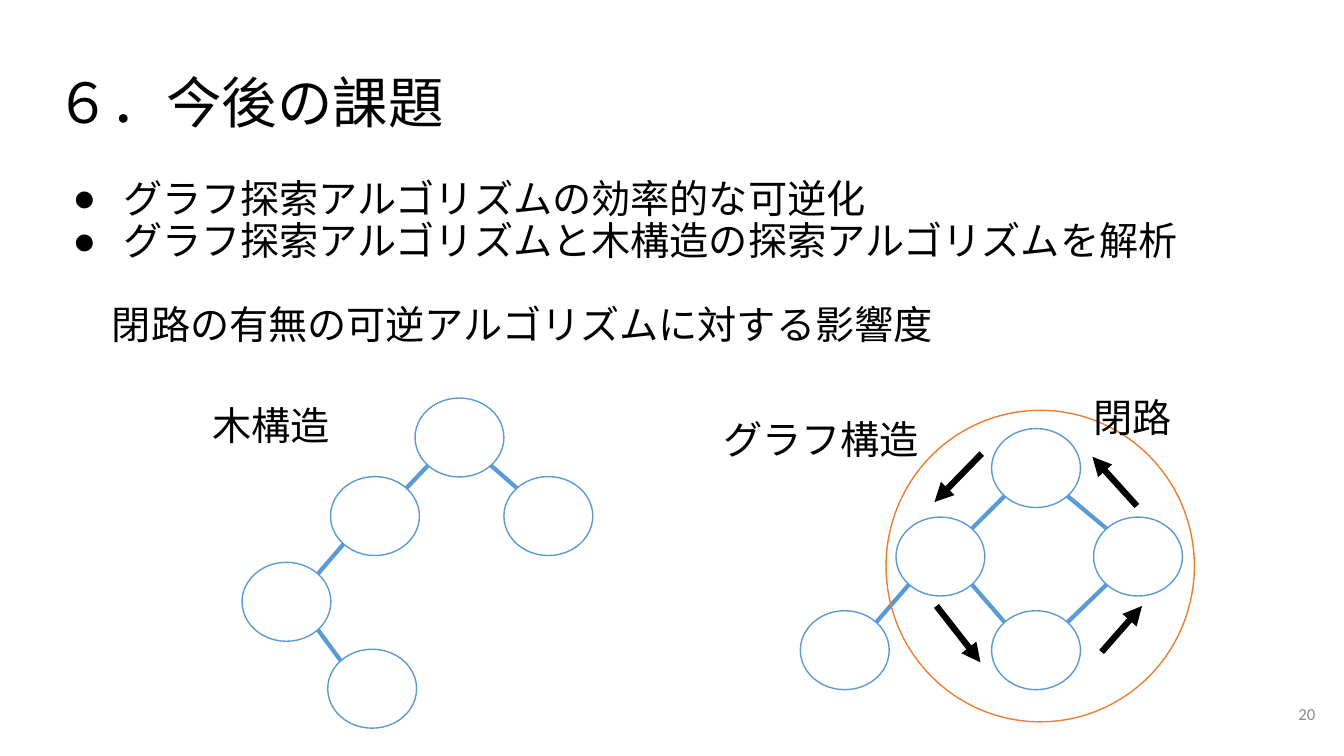
from lxml.etree import SubElement
from math import copysign, sqrt
from pptx import Presentation
from pptx.dml.color import RGBColor
from pptx.enum.shapes import MSO_CONNECTOR, MSO_SHAPE
from pptx.enum.text import MSO_ANCHOR, MSO_AUTO_SIZE, PP_ALIGN
from pptx.oxml.ns import qn
from pptx.util import Cm, Pt

BLACK = RGBColor(0x00, 0x00, 0x00)
WHITE = RGBColor(0xFF, 0xFF, 0xFF)
BLUE = RGBColor(0x5B, 0x9B, 0xD5)
ORANGE = RGBColor(0xED, 0x7D, 0x31)
GRAY = RGBColor(0x8C, 0x8C, 0x8C)

NODE_WIDTH, NODE_HEIGHT = 2.24, 1.99

TREE_NODES = {
    "root": (10.46, 10.03),
    "right": (12.7, 12.01),
    "left": (8.33, 12.01),
    "lower left": (6.1, 14.17),
    "leaf": (8.26, 16.36),
}
TREE_EDGES = [
    ("root", "left"), ("root", "right"),
    ("left", "lower left"), ("lower left", "leaf"),
]
GRAPH_NODES = {
    "top": (24.99, 10.8),
    "right": (27.56, 13.03),
    "outside": (20.17, 15.39),
    "bottom": (24.99, 15.39),
    "left": (22.58, 13.03),
}
GRAPH_EDGES = [
    ("top", "left"), ("top", "right"), ("left", "outside"),
    ("left", "bottom"), ("bottom", "right"),
]
CYCLE_ARROWS = [
    ((24.74, 11.43), (23.55, 12.65)),
    ((23.6, 15.27), (24.71, 16.69)),
    ((27.76, 16.43), (28.78, 15.27)),
    ((28.65, 12.75), (27.53, 11.51)),
]


def write(paragraph, text, size=28, color=BLACK, align=PP_ALIGN.LEFT,
          line_spacing=None, space_before=0, margin=0, bullet=None, hanging=0):
    run = paragraph.add_run()
    run.text = text
    run.font.name = "Calibri"
    run.font.size = Pt(size)
    run.font.color.rgb = color
    paragraph.alignment = align
    paragraph.line_spacing = line_spacing
    paragraph.space_before = Pt(space_before)
    properties = paragraph._p.get_or_add_pPr()
    properties.set("marL", str(Cm(margin)))
    properties.set("indent", str(-Cm(hanging)))
    if bullet:
        SubElement(properties, qn("a:buChar")).set("char", bullet)
    else:
        SubElement(properties, qn("a:buNone"))


def place(shape, left, top, width, height):
    shape.left, shape.top = Cm(left), Cm(top)
    shape.width, shape.height = Cm(width), Cm(height)


def prepare_frame(shape, anchor=MSO_ANCHOR.TOP, inset=0.25):
    frame = shape.text_frame
    frame.word_wrap = True
    frame.auto_size = MSO_AUTO_SIZE.NONE
    frame.vertical_anchor = anchor
    frame.margin_left = frame.margin_right = Cm(0.25)
    frame.margin_top = frame.margin_bottom = Cm(inset)
    return frame


def add_label(slide, text, left, top, width, inset=0.13,
              anchor=MSO_ANCHOR.TOP, **style):
    box = slide.shapes.add_textbox(Cm(left), Cm(top), Cm(width), Cm(1.45))
    write(prepare_frame(box, anchor, inset).paragraphs[0], text, **style)


def add_ellipse(slide, left, top, width, height, outline, fill=None):
    ellipse = slide.shapes.add_shape(
        MSO_SHAPE.OVAL, Cm(left), Cm(top), Cm(width), Cm(height))
    ellipse.shadow.inherit = False
    if fill is None:
        ellipse.fill.background()
    else:
        ellipse.fill.solid()
        ellipse.fill.fore_color.rgb = fill
    ellipse.line.color.rgb = outline
    ellipse.line.width = Pt(1)


def add_line(slide, start, end, color, width, arrow=False):
    line = slide.shapes.add_connector(
        MSO_CONNECTOR.STRAIGHT, *(Cm(value) for value in (*start, *end)))
    line.line.color.rgb = color
    line.line.width = Pt(width)
    if arrow:
        SubElement(line.line._get_or_add_ln(), qn("a:tailEnd")).set("type", "triangle")
    SubElement(line._element.spPr, qn("a:effectLst"))


def rim_point(node, toward):
    reach = 1 / sqrt(8)
    return tuple(
        corner + size / 2 + copysign(size * reach, target - corner)
        for corner, target, size in zip(node, toward, (NODE_WIDTH, NODE_HEIGHT)))


def add_network(slide, nodes, edges):
    for left, top in nodes.values():
        add_ellipse(slide, left, top, NODE_WIDTH, NODE_HEIGHT, BLUE, WHITE)
    for first, second in edges:
        start, end = nodes[first], nodes[second]
        add_line(slide, rim_point(start, end), rim_point(end, start), BLUE, 3)


def fill_placeholders(slide):
    title, body = slide.placeholders
    place(title, 1.15, 1.65, 31.55, 2.13)
    write(prepare_frame(title).paragraphs[0], "６．今後の課題",
          size=39.6, line_spacing=0.9)

    place(body, 1.15, 4.27, 31.55, 12.65)
    frame = prepare_frame(body)
    bulleted = dict(margin=1.7, hanging=1.27, bullet="●", line_spacing=0.9)
    write(frame.paragraphs[0], "グラフ探索アルゴリズムの効率的な可逆化", **bulleted)
    write(frame.add_paragraph(),
          "グラフ探索アルゴリズムと木構造の探索アルゴリズムを解析", **bulleted)
    write(frame.add_paragraph(), "閉路の有無の可逆アルゴリズムに対する影響度",
          margin=1.42, line_spacing=0.9, space_before=30)


def main():
    presentation = Presentation()
    presentation.slide_width = Cm(33.87)
    presentation.slide_height = Cm(19.05)
    slide = presentation.slides.add_slide(presentation.slide_layouts[1])

    fill_placeholders(slide)
    add_network(slide, TREE_NODES, TREE_EDGES)
    add_network(slide, GRAPH_NODES, GRAPH_EDGES)
    add_label(slide, "木構造", 5.11, 9.98, 4.93)
    add_label(slide, "グラフ構造", 17.98, 10.34, 5.66)
    add_ellipse(slide, 22.33, 10.34, 7.77, 7.85, ORANGE)
    add_label(slide, "閉路", 27.31, 9.78, 4.57)
    for start, end in CYCLE_ARROWS:
        add_line(slide, start, end, BLACK, 4.5, arrow=True)
    add_label(slide, "20", 31.37, 17.27, 2.03, inset=0.25,
              anchor=MSO_ANCHOR.MIDDLE, size=12, color=GRAY, align=PP_ALIGN.RIGHT)

    presentation.save("out.pptx")


if __name__ == "__main__":
    main()
